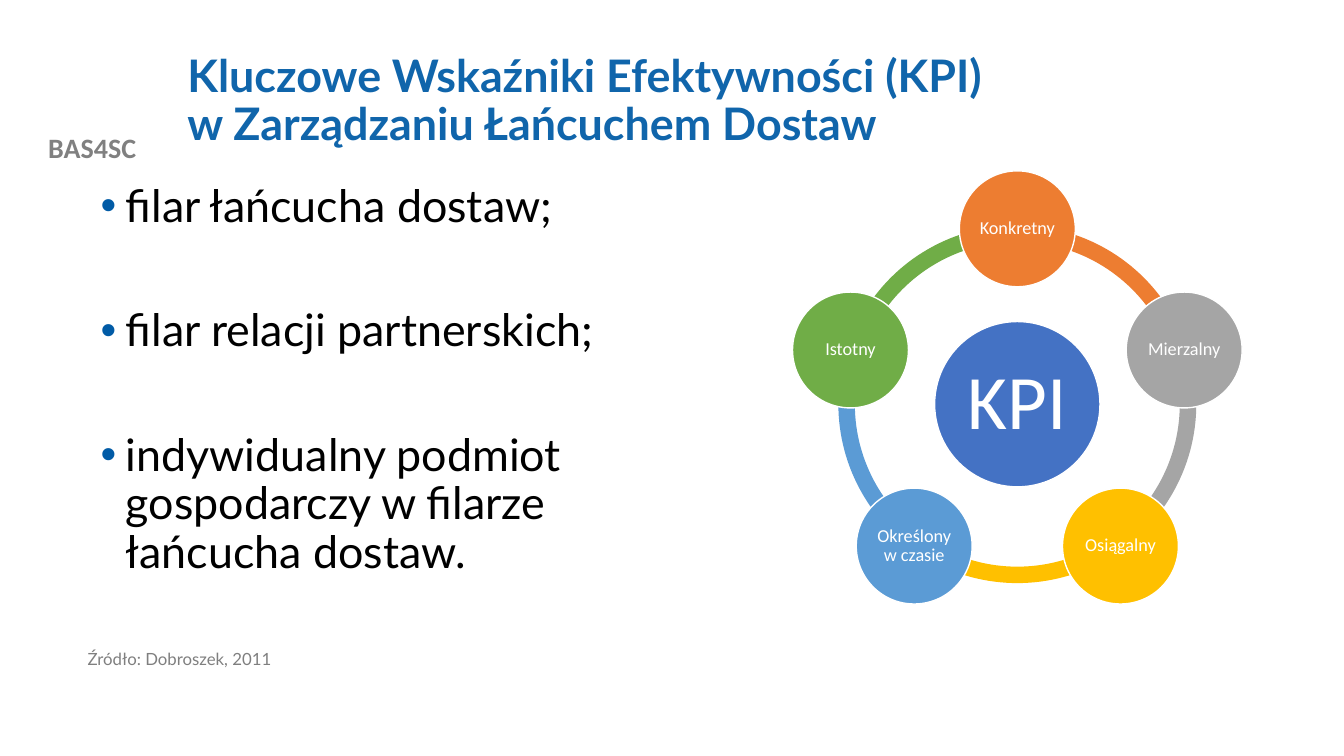
import math
from dataclasses import dataclass

import pptx
import pptx.dml.color
import pptx.enum.shapes
import pptx.enum.text
import pptx.oxml
import pptx.oxml.ns
import pptx.util

Inches = pptx.util.Inches
Pt = pptx.util.Pt
SHAPE = pptx.enum.shapes.MSO_SHAPE
ALIGN = pptx.enum.text.PP_ALIGN
ANCHOR = pptx.enum.text.MSO_ANCHOR


@dataclass(frozen=True)
class Theme:
    heading_font: str = "Lato"
    label_font: str = "Calibri"
    title_color: str = "1065AB"
    bullet_color: str = "015BA6"
    text_color: str = "000000"
    project_color: str = "808080"
    source_color: str = "7F7F7F"
    light: str = "FFFFFF"
    hub_color: str = "4472C4"
    title_size: int = 32
    body_size: int = 32
    project_size: int = 20
    source_size: int = 12
    hub_size: int = 55
    node_size: int = 13
    line_spacing: float = 0.9
    bullet_gap: float = 54.5


class SlideBuilder:
    def __init__(self, page, theme):
        self.page = page
        self.theme = theme

    def color(self, value):
        return pptx.dml.color.RGBColor.from_string(value)

    def style(self, para, font, size, color, bold=False):
        para.line_spacing = self.theme.line_spacing
        for span in para.runs:
            span.font.name = font
            span.font.size = Pt(size)
            span.font.bold = bold
            span.font.color.rgb = self.color(color)

    def box(self, left, top, width, height, anchor=ANCHOR.TOP):
        box = self.page.shapes.add_textbox(
            Inches(left), Inches(top), Inches(width), Inches(height)
        )
        box.text_frame.word_wrap = True
        box.text_frame.vertical_anchor = anchor
        return box.text_frame

    def text(self, place, lines, font, size, color, bold=False,
             align=ALIGN.LEFT, anchor=ANCHOR.TOP):
        para = self.box(*place, anchor).paragraphs[0]
        para.alignment = align
        for index, line in enumerate(lines):
            if index:
                para.add_line_break()
            para.add_run().text = line
        self.style(para, font, size, color, bold)

    def bullets(self, place, items):
        theme = self.theme
        frame = self.box(*place)
        for index, item in enumerate(items):
            para = frame.add_paragraph() if index else frame.paragraphs[0]
            props = para._p.get_or_add_pPr()
            props.set("marL", str(Inches(0.25)))
            props.set("indent", str(Inches(-0.25)))
            space = pptx.oxml.ns.nsdecls("a")
            for xml in (
                f'<a:buClr {space}><a:srgbClr val="{theme.bullet_color}"/></a:buClr>',
                f'<a:buFont {space} typeface="Arial"/>',
                f'<a:buChar {space} char="•"/>',
            ):
                props.append(pptx.oxml.parse_xml(xml))
            if index:
                para.space_before = Pt(theme.bullet_gap)
            para.add_run().text = item
            self.style(para, theme.heading_font, theme.body_size, theme.text_color)

    def round_shape(self, kind, center, diameter, fill):
        left, top = (value - diameter / 2 for value in center)
        shape = self.page.shapes.add_shape(
            kind, Inches(left), Inches(top), Inches(diameter), Inches(diameter)
        )
        shape.shadow.inherit = False
        shape.fill.solid()
        shape.fill.fore_color.rgb = self.color(fill)
        return shape

    def arc(self, center, diameter, start, end, fill):
        arc = self.round_shape(SHAPE.BLOCK_ARC, center, diameter, fill)
        arc.line.fill.background()
        units_per_degree = 0.6
        arc.adjustments[0] = start % 360 * units_per_degree
        arc.adjustments[1] = end % 360 * units_per_degree
        arc.adjustments[2] = 0.046

    def circle(self, center, diameter, fill, label, size, inset):
        circle = self.round_shape(SHAPE.OVAL, center, diameter, fill)
        circle.line.color.rgb = self.color(self.theme.light)
        circle.line.width = Pt(1)
        frame = circle.text_frame
        frame.word_wrap = True
        frame.vertical_anchor = ANCHOR.MIDDLE
        frame.margin_left = frame.margin_right = Inches(inset)
        frame.margin_top = frame.margin_bottom = Inches(inset)
        para = frame.paragraphs[0]
        para.alignment = ALIGN.CENTER
        para.add_run().text = label
        self.style(para, self.theme.label_font, size, self.theme.light)

    def radial_cycle(self, center, radius, hub, nodes):
        step = 360 / len(nodes)
        angles = [270 + step * index for index in range(len(nodes))]
        for angle, (label, fill) in zip(angles, nodes):
            self.arc(center, 3.55, angle, angle + step, fill)
        self.circle(center, 1.64, self.theme.hub_color, hub, self.theme.hub_size, 0.08)
        for angle, (label, fill) in zip(angles, nodes):
            turn = math.radians(angle)
            spot = (center[0] + radius * math.cos(turn),
                    center[1] + radius * math.sin(turn))
            self.circle(spot, 1.15, fill, label, self.theme.node_size, 0.02)


def main():
    deck = pptx.Presentation()
    deck.slide_width = Inches(13.33)
    deck.slide_height = Inches(7.5)
    theme = Theme()
    builder = SlideBuilder(deck.slides.add_slide(deck.slide_layouts[6]), theme)

    builder.text((0, 1.28, 1.83, 0.44), ["BAS4SC"], theme.label_font,
                 theme.project_size, theme.project_color, bold=True,
                 align=ALIGN.CENTER)
    builder.text((1.76, 0.4, 10.66, 1.22),
                 ["Kluczowe Wskaźniki Efektywności (KPI)",
                  "w Zarządzaniu Łańcuchem Dostaw"],
                 theme.heading_font, theme.title_size, theme.title_color,
                 bold=True, anchor=ANCHOR.MIDDLE)
    builder.bullets((0.9, 1.77, 5.9, 4.76), [
        "filar łańcucha dostaw;",
        "filar relacji partnerskich;",
        "indywidualny podmiot gospodarczy w filarze łańcucha dostaw.",
    ])
    builder.text((0.77, 6.41, 5.01, 0.52), ["Źródło: Dobroszek, 2011"],
                 theme.heading_font, theme.source_size, theme.source_color)
    builder.radial_cycle((10.09, 4.01), 1.74, "KPI", [
        ("Konkretny", "ED7D31"),
        ("Mierzalny", "A5A5A5"),
        ("Osiągalny", "FFC000"),
        ("Określony w czasie", "5B9BD5"),
        ("Istotny", "70AD47"),
    ])
    deck.save("out.pptx")


if __name__ == "__main__":
    main()
